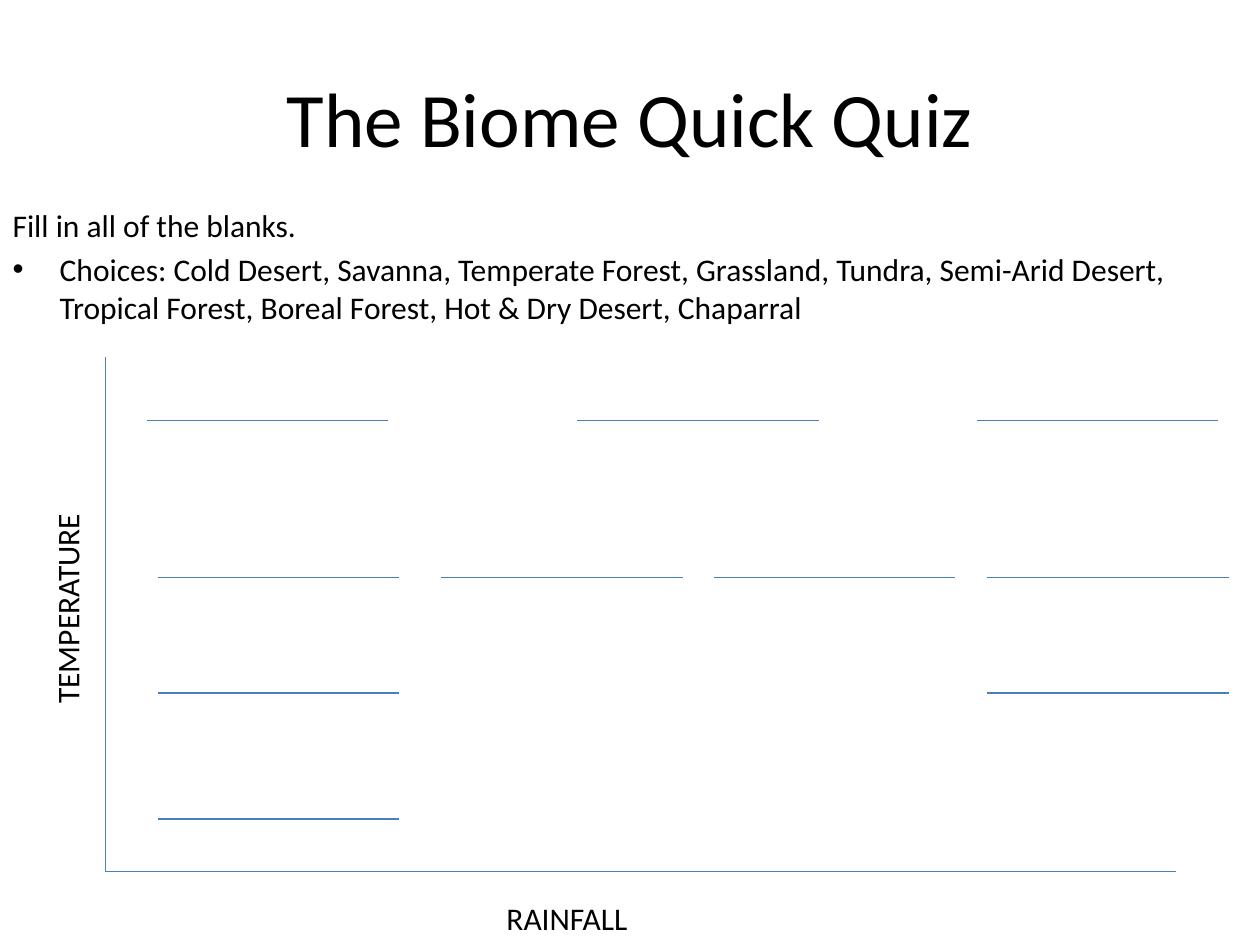
from dataclasses import dataclass

from lxml import etree
from pptx import Presentation
from pptx.dml.color import RGBColor
from pptx.enum.shapes import MSO_CONNECTOR
from pptx.enum.text import MSO_ANCHOR, MSO_AUTO_SIZE, PP_ALIGN
from pptx.oxml.ns import qn
from pptx.util import Cm, Pt

STRAIGHT = MSO_CONNECTOR.STRAIGHT
CENTER, LEFT = PP_ALIGN.CENTER, PP_ALIGN.LEFT
TOP, MIDDLE = MSO_ANCHOR.TOP, MSO_ANCHOR.MIDDLE
NO_FIT = MSO_AUTO_SIZE.NONE

FONT, BLACK, BLUE = "Calibri", "000000", "4B7EBC"
BLANK_WIDTH = 4.87
INDENT = 0.95


@dataclass
class Box:
    left: float
    top: float
    width: float
    height: float
    rotation: float = 0


@dataclass
class BlankRow:
    y: float
    lefts: tuple[float, ...]


TITLE_BOX = Box(1.27, 0.76, 22.86, 3.18)
BODY_BOX = Box(0, 4.02, 25.4, 13.33)
AXIS_LABELS = {
    "RAINFALL": Box(4.02, 17.99, 14.82, 1.06),
    "TEMPERATURE": Box(-6.04, 11.74, 14.82, 1.06, 270),
}
BLANK_ROWS = [
    BlankRow(8.47, (2.96, 11.64, 19.69)),
    BlankRow(11.64, (3.18, 8.89, 14.39, 19.9)),
    BlankRow(13.97, (3.18, 19.9)),
    BlankRow(16.51, (3.18,)),
]
AXIS_X, AXIS_TOP, AXIS_Y, AXIS_RIGHT = 2.12, 7.2, 17.57, 23.71


def color(value: str) -> RGBColor:
    return RGBColor.from_string(value)


def place(sp, box: Box) -> None:
    for name in ("left", "top", "width", "height"):
        setattr(sp, name, Cm(getattr(box, name)))
    sp.rotation = box.rotation


def write(sp, lines: list[str], size: float, align, anchor) -> None:
    tf = sp.text_frame
    frame_format = {"word_wrap": True, "auto_size": NO_FIT,
                    "vertical_anchor": anchor}
    for name, value in frame_format.items():
        setattr(tf, name, value)
    tf.text = "\n".join(lines)
    for p in tf.paragraphs:
        p.alignment = align
        for r in p.runs:
            for name, value in {"name": FONT, "size": Pt(size)}.items():
                setattr(r.font, name, value)
            r.font.color.rgb = color(BLACK)


def set_bullet(p, char: str = "") -> None:
    """Give the paragraph a hanging indent, with a bullet if one is named."""
    pPr = p._p.get_or_add_pPr()
    pPr.set("marL", str(Cm(INDENT)))
    pPr.set("indent", str(-Cm(INDENT)))
    if char:
        etree.SubElement(pPr, qn("a:buChar")).set("char", char)
    else:
        etree.SubElement(pPr, qn("a:buNone"))


def add_line(s, x1: float, y1: float, x2: float, y2: float) -> None:
    line = s.shapes.add_connector(STRAIGHT, Cm(x1), Cm(y1), Cm(x2), Cm(y2))
    line.line.width = Pt(0.75)
    line.line.color.rgb = color(BLUE)
    etree.SubElement(line._element.spPr, qn("a:effectLst"))


def main() -> None:
    prs = Presentation()
    prs.slide_width, prs.slide_height = Cm(25.4), Cm(19.05)
    s = prs.slides.add_slide(prs.slide_layouts[1])

    # Title and instructions
    title, body = s.placeholders
    place(title, TITLE_BOX)
    write(title, ["The Biome Quick Quiz"], 44, CENTER, MIDDLE)
    place(body, BODY_BOX)
    write(body, [
        "Fill in all of the blanks.",
        "Choices: Cold Desert, Savanna, Temperate Forest, Grassland, Tundra, "
        "Semi-Arid Desert, Tropical Forest, Boreal Forest, "
        "Hot & Dry Desert, Chaparral",
    ], 18, LEFT, TOP)
    for p, char in zip(body.text_frame.paragraphs, ("", "•")):
        set_bullet(p, char)

    # Axes and their labels
    add_line(s, AXIS_X, AXIS_TOP, AXIS_X, AXIS_Y)
    add_line(s, AXIS_RIGHT, AXIS_Y, AXIS_X, AXIS_Y)
    for text, box in AXIS_LABELS.items():
        label = s.shapes.add_textbox(0, 0, 0, 0)
        place(label, box)
        write(label, [text], 18, CENTER, TOP)

    # Answer blanks
    for row in BLANK_ROWS:
        for left in row.lefts:
            add_line(s, left, row.y, left + BLANK_WIDTH, row.y)

    prs.save("out.pptx")


if __name__ == "__main__":
    main()
